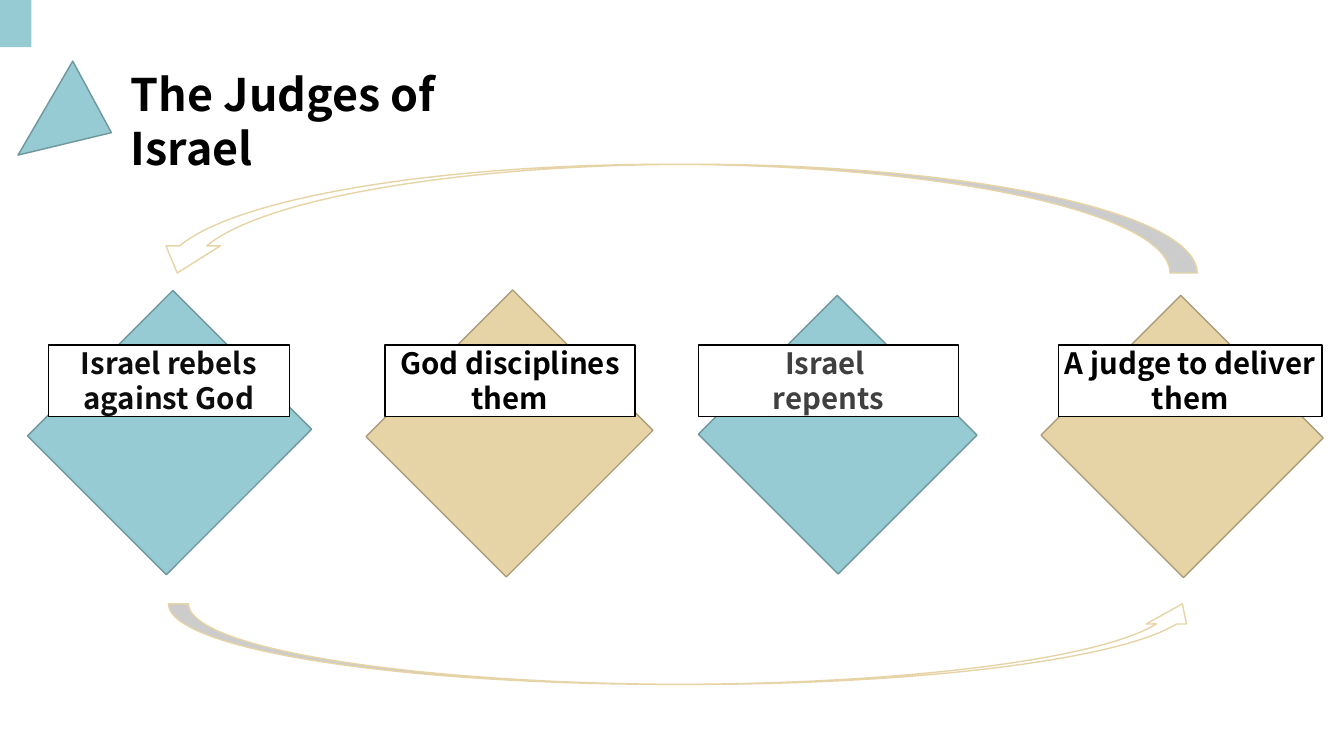
"""Build a slide showing the cycle of the judges of Israel."""
from pptx import Presentation
from pptx.dml.color import RGBColor
from pptx.enum.shapes import MSO_SHAPE
from pptx.enum.text import MSO_ANCHOR, PP_ALIGN
from pptx.util import Cm, Pt

RECTANGLE = MSO_SHAPE.RECTANGLE
TRIANGLE = MSO_SHAPE.ISOSCELES_TRIANGLE
CURVED_UP = MSO_SHAPE.CURVED_UP_ARROW
CURVED_RIGHT = MSO_SHAPE.CURVED_RIGHT_ARROW
LEFT, CENTER = PP_ALIGN.LEFT, PP_ALIGN.CENTER
TOP, MIDDLE = MSO_ANCHOR.TOP, MSO_ANCHOR.MIDDLE

FONT = "Noto Sans CJK SC"
COLORS = {
    "teal": "96CBD3",
    "teal edge": "6F969C",
    "sand": "E7D4A6",
    "sand edge": "AB9D7B",
    "white": "FFFFFF",
    "black": "000000",
    "near black": "0D0D0D",
    "gray": "404040",
}

presentation = Presentation()
presentation.slide_width = Cm(33.87)
presentation.slide_height = Cm(19.05)
slide = presentation.slides.add_slide(presentation.slide_layouts[6])


def add_block(kind, box, fill, edge=None, rotation=0):
    shape = slide.shapes.add_shape(kind, *map(Cm, box))
    shape.shadow.inherit = False
    shape.rotation = rotation
    shape.fill.solid()
    shape.fill.fore_color.rgb = RGBColor.from_string(COLORS[fill])
    if edge:
        shape.line.color.rgb = RGBColor.from_string(COLORS[edge])
        shape.line.width = Pt(1)
    else:
        shape.line.fill.background()
    return shape


def write_text(shape, text, size, color="black", align=CENTER, anchor=MIDDLE, inset=(0, 0)):
    frame = shape.text_frame
    frame.word_wrap = True
    frame.vertical_anchor = anchor
    frame.margin_left = frame.margin_right = Cm(inset[0])
    frame.margin_top = frame.margin_bottom = Cm(inset[1])
    frame.text = text
    for paragraph in frame.paragraphs:
        paragraph.alignment = align
        font = paragraph.runs[0].font
        font.name = FONT
        font.size = Pt(size)
        font.bold = True
        font.color.rgb = RGBColor.from_string(COLORS[color])


title = slide.shapes.add_textbox(Cm(3.05), Cm(1.55), Cm(10.87), Cm(1.63))
write_text(title, "The Judges of Israel", 32, align=LEFT, anchor=TOP, inset=(0.25, 0.13))

stages = [
    ("Israel rebels against God", "near black", "teal", (1.8, 8.31, 4.95, 5.18), 1.22, 6.07),
    ("God disciplines them", "black", "sand", (10.34, 8.31, 5, 5.23), 9.7, 6.3),
    ("Israel \nrepents", "gray", "teal", (18.62, 8.48, 4.98, 4.95), 17.6, 6.55),
    ("A judge to deliver them", "black", "sand", (27.25, 8.51, 5.08, 4.98), 26.67, 6.65),
]
for text, text_color, fill, diamond_box, label_left, label_width in stages:
    add_block(RECTANGLE, diamond_box, fill, f"{fill} edge", rotation=45)
    label = add_block(RECTANGLE, (label_left, 8.69, label_width, 1.8), "white", "black")
    write_text(label, text, 21, color=text_color)

triangle = add_block(TRIANGLE, (0.53, 2.29, 2.74, 1.75), "teal", "teal edge", rotation=120.2)
triangle.adjustments[0] = 0.39

add_block(CURVED_UP, (3.78, 4.14, 26.39, 2.74), "white", "sand", rotation=180)
add_block(CURVED_RIGHT, (16.26, 3.2, 2.03, 26.06), "white", "sand", rotation=270)
add_block(RECTANGLE, (0, 0, 0.79, 1.19), "teal")

presentation.save("out.pptx")
